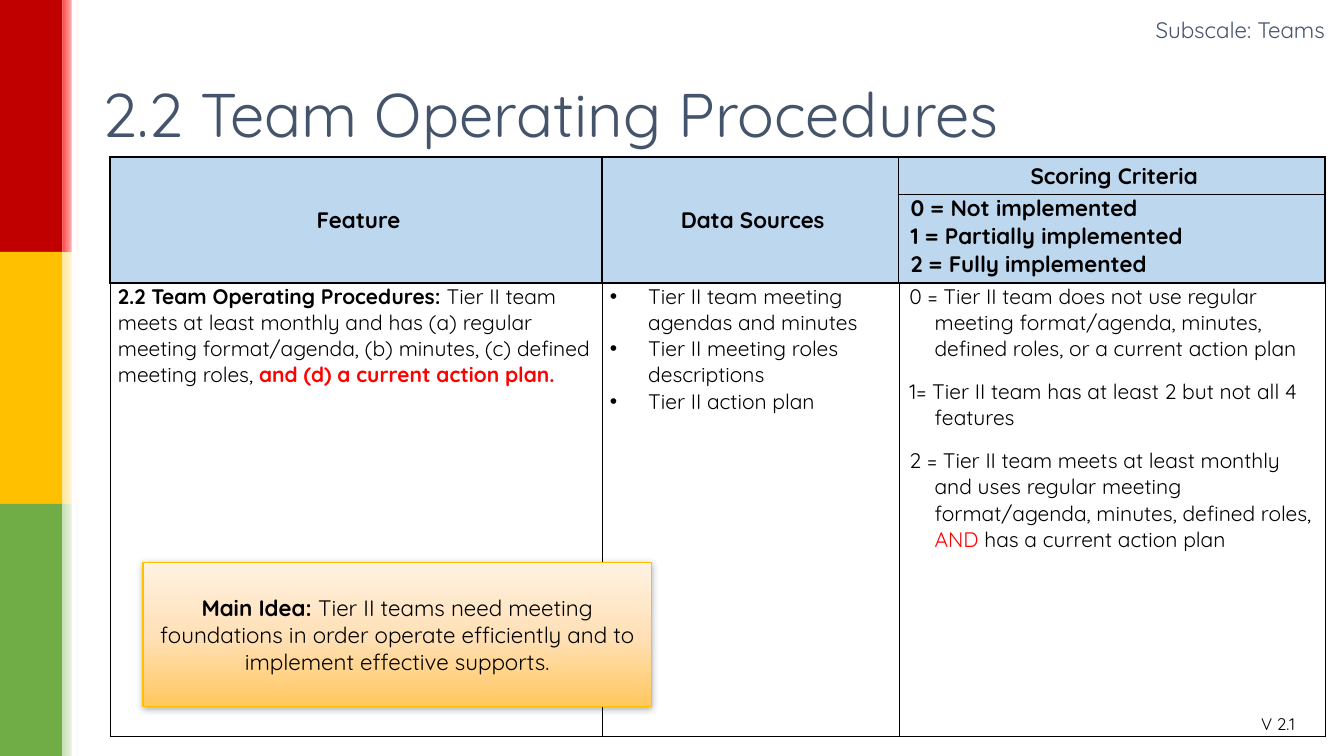
from pptx import Presentation
from pptx.dml.color import RGBColor
from pptx.enum.shapes import MSO_SHAPE
from pptx.enum.text import MSO_ANCHOR, PP_ALIGN
from pptx.oxml import parse_xml
from pptx.oxml.ns import nsdecls, qn
from pptx.util import Inches, Pt

FONT = "Quicksand"
C = {
    "black": "000000", "white": "FFFFFF", "slate": "44546A", "alert": "FF0000",
    "header": "BDD7EE", "red": "C00000", "gold": "FFC000", "green": "70AD47",
    "red_fade": "FF4747", "gold_fade": "FFE699", "green_fade": "C5E0B4",
    "amber": "FFC75E", "peach": "FFE0B6", "cream": "FFF2E2",
}
W, H = Inches(13.33), Inches(7.5)
COLUMNS = (36.61, 22.06, 31.73)


def area(x, y, w, h):
    """Turn percentages of the slide into a position and size."""
    return int(W * x / 100), int(H * y / 100), int(W * w / 100), int(H * h / 100)


def xml(tag, attrs="", inner=""):
    """Build one DrawingML element."""
    return parse_xml(f"<a:{tag} {nsdecls('a')} {attrs}>{inner}</a:{tag}>")


def color_xml(name, inner=""):
    """Return the markup of a named colour."""
    return f'<a:srgbClr val="{C[name]}">{inner}</a:srgbClr>'


def add_paragraph(tf, runs, size, first, align=PP_ALIGN.LEFT, indent=(0, 0), after=0, bullet=None):
    """Write (text, colour, bold) runs as one paragraph."""
    p = tf.paragraphs[0] if first else tf.add_paragraph()
    p.alignment = align
    p.space_before, p.space_after = Pt(0), Pt(after)
    pPr = p._p.get_or_add_pPr()
    pPr.set("marL", str(Inches(indent[0])))
    pPr.set("indent", str(Inches(indent[1])))
    if bullet:
        pPr.append(xml("buFont", 'typeface="Arial"'))
        pPr.append(xml("buChar", f'char="{bullet}"'))
    for text, color, bold in runs:
        r = p.add_run()
        r.text = text
        r.font.name, r.font.size, r.font.bold = FONT, Pt(size), bold
        r.font.color.rgb = RGBColor.from_string(C[color])


def write(tf, paragraphs, size, **style):
    """Fill a text frame with equally styled paragraphs."""
    for i, runs in enumerate(paragraphs):
        add_paragraph(tf, runs, size, i == 0, **style)


def add_label(s, box, text, size, color, align=PP_ALIGN.LEFT):
    """Add a one-line text box."""
    tf = s.shapes.add_textbox(*area(*box)).text_frame
    tf.word_wrap = True
    write(tf, [[(text, color, False)]], size, align=align)


def add_block(s, box, stops, angle=0):
    """Add a borderless rectangle with a solid or gradient fill."""
    sp = s.shapes.add_shape(MSO_SHAPE.RECTANGLE, *area(*box))
    sp.shadow.inherit = False
    sp.line.fill.background()
    sp.fill.solid()
    sp.fill.fore_color.rgb = RGBColor.from_string(C[stops[0][1]])
    if len(stops) > 1:
        gs = "".join(f'<a:gs pos="{pos * 1000}">{color_xml(name)}</a:gs>' for pos, name in stops)
        spPr = sp._element.spPr
        spPr.replace(
            spPr.find(qn("a:solidFill")),
            xml("gradFill", 'rotWithShape="1"',
                f'<a:gsLst>{gs}</a:gsLst><a:lin ang="{angle * 60000}" scaled="0"/>'))
    return sp


def add_side_bands(s):
    """Draw the three colour bands with their fading edges."""
    third = 100 / 3
    for i, name in enumerate(("red", "gold", "green")):
        add_block(s, (0, i * third, 4.65, third), [(0, name)])
        add_block(s, (4.65, i * third, 1.2, third), [(0, f"{name}_fade"), (100, "white")])
    add_block(s, (5.33, 0, 0.38, 100), [(0, "white")])


def add_grid(s, x, y, rows, fill=None, widths=(1, 1, 1, 1)):
    """Add a table with plain cells; widths are left, right, top, bottom lines."""
    frame = s.shapes.add_table(
        len(rows), len(COLUMNS), *area(x, y, sum(COLUMNS), sum(rows)))
    table = frame.table
    table.first_row = table.horz_banding = False
    for column, share in zip(table.columns, COLUMNS):
        column.width = int(W * share / 100)
    for row, share in zip(table.rows, rows):
        row.height = int(H * share / 100)
    for cell in table.iter_cells():
        cell.margin_left = cell.margin_right = Inches(0.07)
        cell.margin_top = cell.margin_bottom = 0
        if fill:
            cell.fill.solid()
            cell.fill.fore_color.rgb = RGBColor.from_string(C[fill])
        else:
            cell.fill.background()
        tcPr = cell._tc.get_or_add_tcPr()
        for i, (side, width) in enumerate(zip("LRTB", widths)):
            tcPr.insert(i, xml(f"ln{side}", f'w="{Pt(width)}"',
                               f"<a:solidFill>{color_xml('black')}</a:solidFill>"))
    return table


def add_header(s):
    """Add the header table with its two merged headings."""
    table = add_grid(s, 8.18, 20.8, (4.93, 11.73), "header", (1.5, 1.5, 1.5, 1.5))
    for col, text in enumerate(("Feature", "Data Sources", "Scoring Criteria")):
        cell = table.cell(0, col)
        if col < 2:
            cell.merge(table.cell(1, col))
        cell.vertical_anchor = MSO_ANCHOR.MIDDLE
        write(cell.text_frame, [[(text, "black", True)]], 16,
              align=PP_ALIGN.CENTER, indent=(0.36, -0.31))
    levels = ("0 = Not implemented", "1 = Partially implemented", "2 = Fully implemented")
    write(table.cell(1, 2).text_frame, [[(level, "black", True)] for level in levels], 16,
          indent=(0.36, -0.31))


def add_body(s):
    """Add the table with the feature, its sources and its scores."""
    table = add_grid(s, 8.25, 37.47, (60,))
    feature, sources, scores = (table.cell(0, col).text_frame for col in range(3))
    write(feature, [[
        ("2.2 Team Operating Procedures: ", "black", True),
        ("Tier II team meets at least monthly and has (a) regular meeting format/agenda, "
         "(b) minutes, (c) defined meeting roles, ", "black", False),
        ("and (d) a current action plan.", "alert", True)]], 15)
    items = ("Tier II team meeting agendas and minutes",
             "Tier II meeting roles descriptions", "Tier II action plan")
    write(sources, [[(item, "black", False)] for item in items], 15,
          indent=(0.38, -0.38), bullet="•")
    write(scores, [
        [("0 = Tier II team does not use regular meeting format/agenda, minutes, "
          "defined roles, or a current action plan", "black", False)],
        [("1= Tier II team has at least 2 but not all 4 features", "black", False)],
        [("2 = Tier II team meets at least monthly and uses regular meeting "
          "format/agenda, minutes, defined roles, ", "black", False),
         ("AND ", "alert", False), ("has a current action plan", "black", False)],
    ], 15, indent=(0.28, -0.25), after=12)


def add_main_idea(s):
    """Add the shaded callout with a soft shadow."""
    sp = add_block(s, (10.65, 74.4, 37.81, 19.07),
                   [(0, "amber"), (48, "peach"), (100, "cream")], 270)
    sp.line.color.rgb = RGBColor.from_string(C["gold"])
    sp.line.width = Pt(1)
    shade = color_xml("black", '<a:alpha val="32000"/>')
    sp._element.spPr.find(qn("a:effectLst")).append(
        xml("outerShdw", f'blurRad="{Pt(5)}" dist="{Pt(1)}" dir="5400000" rotWithShape="0"', shade))
    tf = sp.text_frame
    tf.word_wrap = True
    tf.vertical_anchor = MSO_ANCHOR.MIDDLE
    write(tf, [[
        ("Main Idea: ", "black", True),
        ("Tier II teams need meeting foundations in order operate efficiently and to "
         "implement effective supports.", "black", False)]], 16, align=PP_ALIGN.CENTER)


def add_title(s, text):
    """Place and format the title placeholder."""
    title = s.shapes.title
    title.left, title.top, title.width, title.height = area(6.9, 5.33, 93.17, 19.33)
    title.text_frame.vertical_anchor = MSO_ANCHOR.MIDDLE
    write(title.text_frame, [[(text, "slate", False)]], 44)


def main():
    """Build and save the slide."""
    prs = Presentation()
    prs.slide_width, prs.slide_height = W, H
    s = prs.slides.add_slide(prs.slide_layouts[5])
    add_side_bands(s)
    add_title(s, "2.2 Team Operating Procedures")
    add_header(s)
    add_body(s)
    add_main_idea(s)
    add_label(s, (93.1, 93.73, 6.9, 4), "V 2.1", 12, "black")
    add_label(s, (69.39, 1.47, 29.93, 4.93), "Subscale: Teams", 16, "slate", PP_ALIGN.RIGHT)
    prs.save("out.pptx")


if __name__ == "__main__":
    main()
